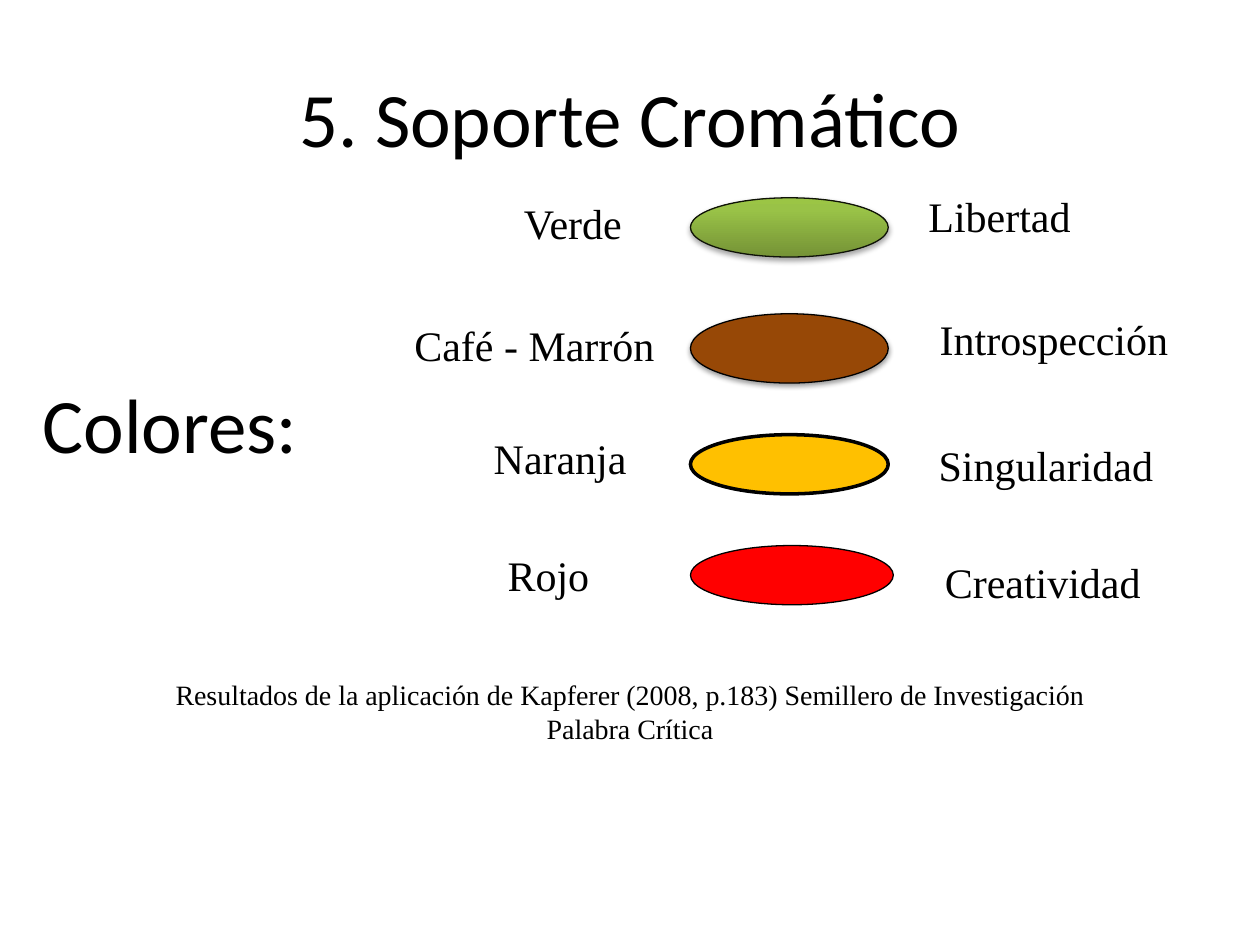
from copy import deepcopy

from lxml import etree
from pptx import Presentation
from pptx.dml.color import RGBColor
from pptx.enum import shapes, text
from pptx.oxml import ns
from pptx.util import Inches, Pt

SERIF = "Times New Roman"
GREEN_STOPS = [(0, "759336"), (0.8, "99C247"), (1, "9BC545")]

# Ellipse: top, width, height, fill, line colour, line width, shadow (alpha %, distance pt)
# Labels: text, left, top, width
ROWS = [
    ((1.57, 1.57, 0.47, GREEN_STOPS, "0F1208", 0.75, (35, 1.8)),
     ("Verde", 4.06, 1.52, 1.89), ("Libertad", 7.27, 1.46, 1.83)),
    ((2.49, 1.57, 0.55, "974806", "000000", 0.75, (38, 1.6)),
     ("Café - Marrón", 3.19, 2.49, 2.29), ("Introspección", 7.36, 2.44, 2.14)),
    ((3.45, 1.57, 0.47, "FFC000", "000000", 2, None),
     ("Naranja", 3.82, 3.38, 1.27), ("Singularidad", 7.35, 3.44, 1.98)),
    ((4.33, 1.61, 0.47, "FF0000", "000000", 0.75, None),
     ("Rojo", 3.93, 4.31, 1.18), ("Creatividad", 7.4, 4.37, 1.81)),
]


def rgb(value):
    return RGBColor.from_string(value)


def add_text(s, words, x, y, w, h=0.5, size=24, font=SERIF,
             align=text.PP_ALIGN.LEFT, anchor=text.MSO_ANCHOR.TOP):
    tf = s.shapes.add_textbox(*map(Inches, (x, y, w, h))).text_frame
    tf.word_wrap = True
    tf.vertical_anchor = anchor
    p = tf.paragraphs[0]
    p.alignment = align
    r = p.add_run()
    r.text = words
    for name, value in {"name": font, "size": Pt(size)}.items():
        setattr(r.font, name, value)
    r.font.color.rgb = rgb("000000")


def fill_gradient(sp, stops):
    sp.fill.gradient()
    sp.fill.gradient_angle = 90
    stop_list = sp._element.spPr.find(".//" + ns.qn("a:gsLst"))
    while len(stop_list) < len(stops):
        stop_list.append(deepcopy(stop_list[-1]))
    for stop, (position, color) in zip(sp.fill.gradient_stops, stops):
        stop.position = position
        stop.color.rgb = rgb(color)


def add_shadow(sp, alpha, distance):
    effects = sp._element.spPr.find(ns.qn("a:effectLst"))
    shadow = etree.SubElement(effects, ns.qn("a:outerShdw"), {
        "blurRad": str(Pt(3.1)), "dist": str(Pt(distance)),
        "dir": "5400000", "rotWithShape": "0"})
    color = etree.SubElement(shadow, ns.qn("a:srgbClr"), val="000000")
    etree.SubElement(color, ns.qn("a:alpha"), val=str(alpha * 1000))


def add_swatch(s, y, w, h, fill, line, line_width, shadow):
    sp = s.shapes.add_shape(shapes.MSO_SHAPE.OVAL, *map(Inches, (5.48, y, w, h)))
    if isinstance(fill, list):
        fill_gradient(sp, fill)
    else:
        sp.fill.solid()
        sp.fill.fore_color.rgb = rgb(fill)
    sp.line.color.rgb = rgb(line)
    sp.line.width = Pt(line_width)
    sp.shadow.inherit = False
    if shadow:
        add_shadow(sp, *shadow)


def main():
    prs = Presentation()
    prs.slide_width, prs.slide_height = Inches(10), Inches(7.5)
    s = prs.slides.add_slide(prs.slide_layouts[6])

    # Headings
    add_text(s, "5. Soporte Cromático", 0.5, 0.3, 9, 1.25, 44, "Calibri",
             text.PP_ALIGN.CENTER, text.MSO_ANCHOR.MIDDLE)
    add_text(s, "Colores:", 0.24, 2.94, 2.28, 0.84, 44, "Calibri")

    # Colour name, swatch and meaning
    for swatch, color_name, meaning in ROWS:
        add_swatch(s, *swatch)
        add_text(s, *color_name)
        add_text(s, *meaning)

    # Source note
    add_text(s, "Resultados de la aplicación de Kapferer (2008, p.183) "
             "Semillero de Investigación Palabra Crítica",
             1.26, 5.33, 7.48, 0.64, 16, align=text.PP_ALIGN.CENTER)

    prs.save("out.pptx")


if __name__ == "__main__":
    main()
